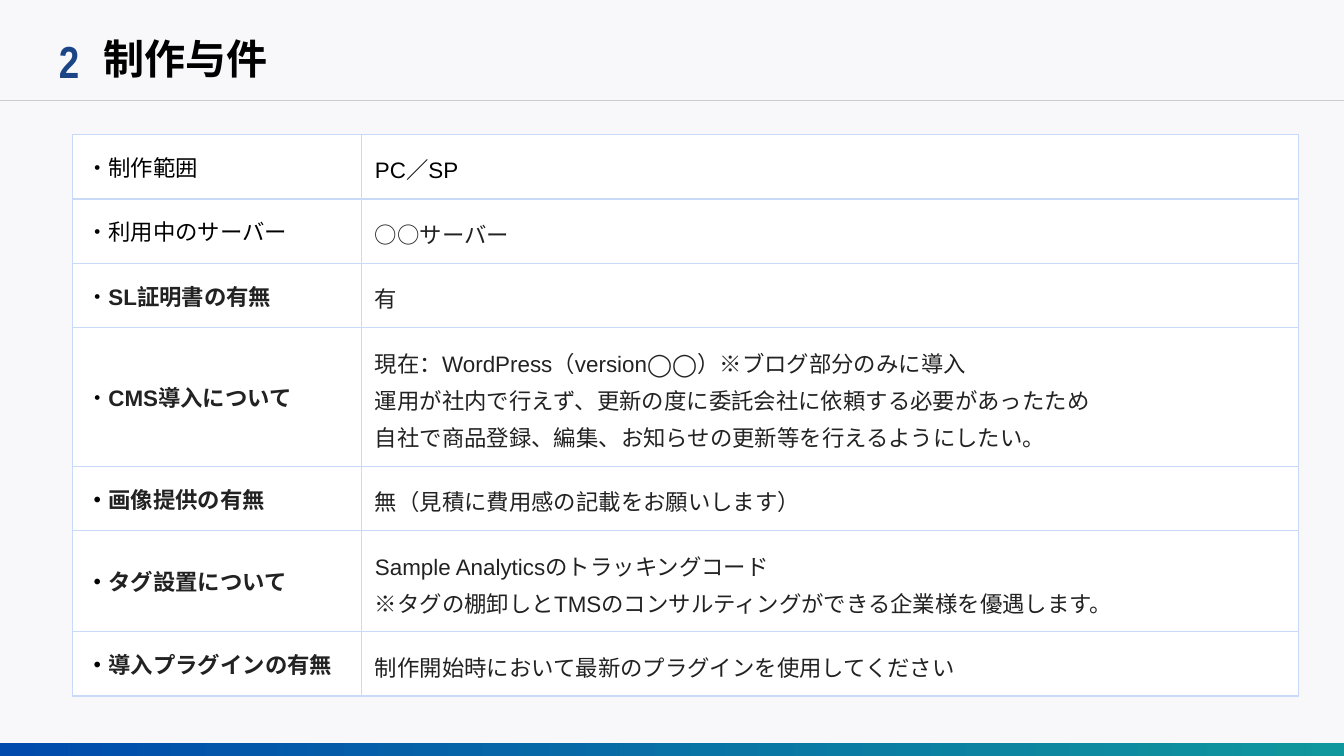
from dataclasses import dataclass

from lxml import etree
from pptx import Presentation
from pptx.dml.color import RGBColor
from pptx.enum import shapes, text
from pptx.oxml import ns
from pptx.util import Inches, Pt


@dataclass(frozen=True)
class Theme:
    background: str = "F8F8FA"
    rule: str = "CCCCCC"
    border: str = "C9DAF8"
    cell: str = "FFFFFF"
    number: str = "1C4587"
    black: str = "000000"
    ink: str = "222222"
    bar_left: str = "004AAD"
    bar_right: str = "10979D"
    font: str = "Arial"
    number_font: str = "Arial Narrow"
    number_size: float = 24
    title_size: float = 22
    body_size: float = 12
    line_width: float = 0.75


T = Theme()
BULLET = "・"
ROWS = [
    ("制作範囲", ["PC／SP"], 0.48, T.black, T.black, False, False),
    ("利用中のサーバー", ["○○サーバー"], 0.48, T.black, T.ink, False, False),
    ("SL証明書の有無", ["有"], 0.48, T.ink, T.ink, False, True),
    ("CMS導入について", [
        "現在：WordPress（version◯◯）※ブログ部分のみに導入",
        "運用が社内で行えず、更新の度に委託会社に依頼する必要があったため",
        "自社で商品登録、編集、お知らせの更新等を行えるようにしたい。",
    ], 1.03, T.ink, T.ink, False, True),
    ("画像提供の有無", ["無（見積に費用感の記載をお願いします）"],
     0.48, T.ink, T.ink, True, True),
    ("タグ設置について", [
        "Sample Analyticsのトラッキングコード",
        "※タグの棚卸しとTMSのコンサルティングができる企業様を優遇します。",
    ], 0.75, T.ink, T.ink, True, True),
    ("導入プラグインの有無", ["制作開始時において最新のプラグインを使用してください"],
     0.48, T.ink, T.ink, True, True),
]


def rgb(value):
    return RGBColor.from_string(value)


def add_run(p, content, size, color, bold=False, font=T.font):
    r = p.add_run()
    r.text = content
    r.font.size = Pt(size)
    r.font.bold = bold
    r.font.name = font
    r.font.color.rgb = rgb(color)


def set_margins(box, anchor):
    box.margin_left = box.margin_right = Inches(0.1)
    box.margin_top = box.margin_bottom = Inches(0.1)
    box.vertical_anchor = anchor


def add_label(s, left, top, width, height, content, size, color, font):
    sp = s.shapes.add_textbox(Inches(left), Inches(top), Inches(width), Inches(height))
    tf = sp.text_frame
    tf.word_wrap = True
    set_margins(tf, text.MSO_ANCHOR.TOP)
    add_run(tf.paragraphs[0], content, size, color, True, font)


def add_header(s, left, top, width, height):
    line = s.shapes.add_connector(
        shapes.MSO_CONNECTOR.STRAIGHT,
        Inches(left), Inches(top + height), Inches(left + width), Inches(top + height))
    line.line.color.rgb = rgb(T.rule)
    line.line.width = Pt(T.line_width)
    etree.SubElement(line._element.spPr, ns.qn("a:effectLst"))
    add_label(s, left + 0.35, top + 0.15, 0.41, 0.63, "2",
              T.number_size, T.number, T.number_font)
    add_label(s, left + 0.68, top + 0.15, 6.16, 0.63, "制作与件",
              T.title_size, T.black, T.font)


def add_footer(s, left, top, width, height):
    sp = s.shapes.add_shape(shapes.MSO_SHAPE.RECTANGLE, Inches(left), Inches(top),
                            Inches(width), Inches(height))
    sp.shadow.inherit = False
    sp.line.fill.background()
    sp.fill.gradient()
    sp.fill.gradient_angle = 0
    for stop, color in zip(sp.fill.gradient_stops, (T.bar_left, T.bar_right)):
        stop.color.rgb = rgb(color)


def style_cell(cell):
    set_margins(cell, text.MSO_ANCHOR.MIDDLE)
    tc_pr = cell._tc.get_or_add_tcPr()
    for side in ("lnL", "lnR", "lnT", "lnB"):
        ln = etree.SubElement(tc_pr, ns.qn(f"a:{side}"), w=str(Pt(T.line_width)))
        fill = etree.SubElement(ln, ns.qn("a:solidFill"))
        etree.SubElement(fill, ns.qn("a:srgbClr"), val=T.border)
    cell.fill.solid()
    cell.fill.fore_color.rgb = rgb(T.cell)


def add_conditions(s, left, top, widths):
    height = sum(row[2] for row in ROWS)
    frame = s.shapes.add_table(len(ROWS), len(widths), Inches(left), Inches(top),
                               Inches(sum(widths)), Inches(height))
    table = frame.table
    table.first_row = table.horz_banding = False
    for column, width in zip(table.columns, widths):
        column.width = Inches(width)
    for i, (label, lines, row_height, label_color, value_color,
            bold_bullet, bold_label) in enumerate(ROWS):
        table.rows[i].height = Inches(row_height)
        head, value = table.cell(i, 0), table.cell(i, 1)
        style_cell(head)
        style_cell(value)
        p = head.text_frame.paragraphs[0]
        if label_color == T.black:
            add_run(p, BULLET + label, T.body_size, label_color)
        else:
            add_run(p, BULLET, T.body_size, T.black, bold_bullet)
            add_run(p, label, T.body_size, label_color, bold_label)
        tf = value.text_frame
        for j, line in enumerate(lines):
            p = tf.add_paragraph() if j else tf.paragraphs[0]
            p.line_spacing = 1.15
            add_run(p, line, T.body_size, value_color)


def main():
    prs = Presentation()
    prs.slide_width = Inches(10)
    prs.slide_height = prs.slide_width * 9 // 16
    s = prs.slides.add_slide(prs.slide_layouts[6])
    s.background.fill.solid()
    s.background.fill.fore_color.rgb = rgb(T.background)
    add_header(s, -0.01, 0, 10.02, 0.75)
    add_footer(s, -0.01, 5.53, 10.02, 0.1)
    add_conditions(s, 0.54, 1, (2.15, 6.97))
    prs.save("out.pptx")


if __name__ == "__main__":
    main()
